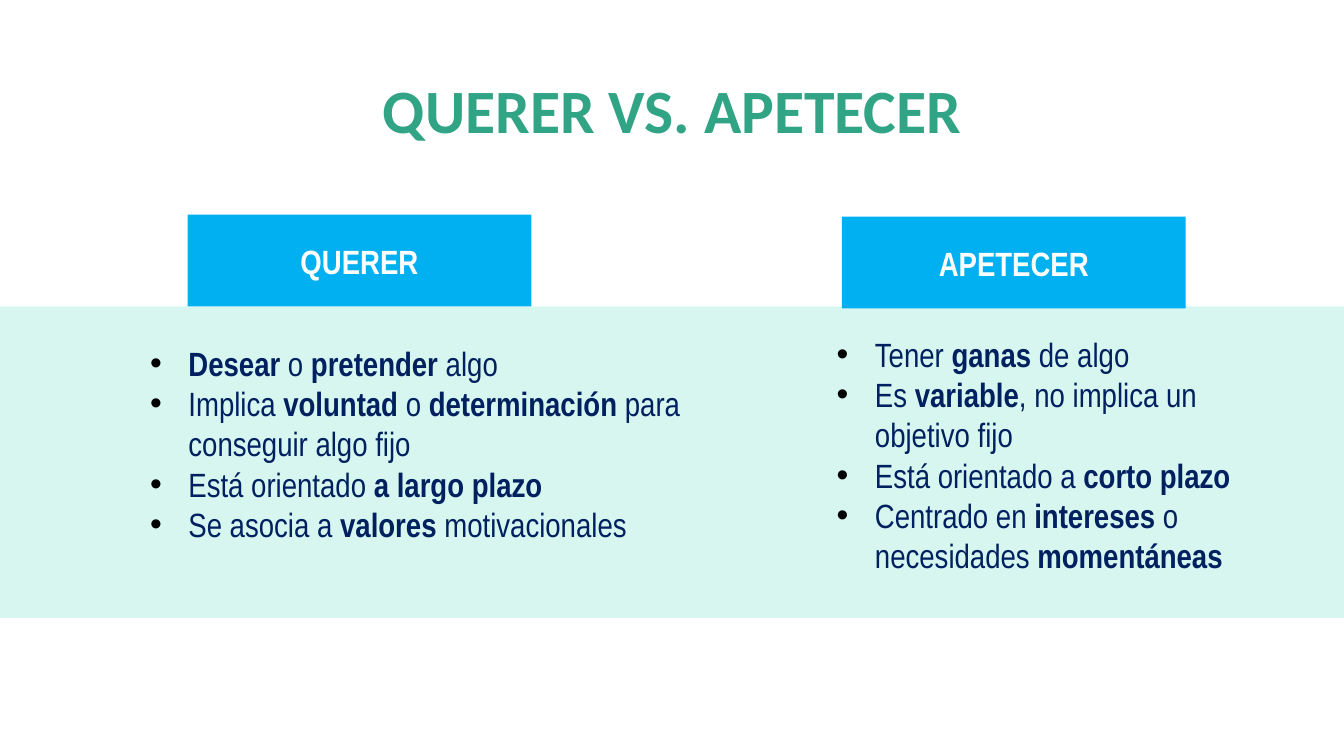
"""Build the slide that contrasts wanting with craving."""
from dataclasses import dataclass

from lxml.etree import SubElement
from pptx import Presentation
from pptx.dml.color import RGBColor
from pptx.enum.shapes import MSO_SHAPE as SHAPE
from pptx.enum.text import MSO_ANCHOR as ANCHOR, MSO_AUTO_SIZE as AUTO, PP_ALIGN as ALIGN
from pptx.oxml.ns import qn
from pptx.shapes.autoshape import Shape
from pptx.slide import Slide
from pptx.util import Inches, Pt

GREEN = RGBColor(0x31, 0xA4, 0x85)
MINT = RGBColor(0x29, 0xD3, 0xAD)
BLUE = RGBColor(0x00, 0xB0, 0xF0)
NAVY = RGBColor(0x00, 0x20, 0x60)
WHITE = RGBColor(0xFF, 0xFF, 0xFF)
BODY_FONT = "Arial Narrow"
INDENT = Inches(0.38)

Box = tuple[float, float, float, float]


@dataclass
class Column:
    """A heading with its points, where asterisks enclose bold words."""
    heading: str
    heading_box: Box
    points_box: Box
    points: list[str]


COLUMNS = [
    Column("QUERER", (1.86, 2.13, 3.41, 0.91), (1.39, 3.35, 6.41, 2.12), [
        "*Desear* o *pretender* algo",
        "Implica *voluntad* o *determinación* para conseguir algo fijo",
        "Está orientado *a largo plazo*",
        "Se asocia a *valores* motivacionales",
    ]),
    Column("APETECER", (8.35, 2.15, 3.41, 0.91), (8.2, 3.26, 4.77, 2.52), [
        "Tener *ganas* de algo",
        "Es *variable*, no implica un objetivo fijo",
        "Está orientado a *corto plazo*",
        "Centrado en *intereses* o necesidades *momentáneas*",
    ]),
]


def add_run(p, text: str, size: float, font: str, color: RGBColor, bold: bool) -> None:
    """Append one styled run to a paragraph."""
    r = p.add_run()
    r.text = text
    r.font.size = Pt(size)
    r.font.name = font
    r.font.color.rgb = color
    r.font.bold = bold


def add_rect(s: Slide, box: Box, color: RGBColor) -> Shape:
    """Draw a flat rectangle without outline."""
    sp = s.shapes.add_shape(SHAPE.RECTANGLE, *map(Inches, box))
    sp.shadow.inherit = False
    sp.fill.solid()
    sp.fill.fore_color.rgb = color
    sp.line.fill.background()
    return sp


def add_label(sp: Shape, text: str, size: float, font: str, color: RGBColor) -> None:
    """Put a bold centred line in the middle of a shape."""
    tf = sp.text_frame
    tf.word_wrap = True
    tf.vertical_anchor = ANCHOR.MIDDLE
    p = tf.paragraphs[0]
    p.alignment = ALIGN.CENTER
    add_run(p, text, size, font, color, True)


def add_bullet(p) -> None:
    """Give a paragraph a black bullet with a hanging indent."""
    pPr = p._p.get_or_add_pPr()
    pPr.set("marL", str(INDENT))
    pPr.set("indent", str(-INDENT))
    SubElement(SubElement(pPr, qn("a:buClr")), qn("a:srgbClr"), val="000000")
    SubElement(pPr, qn("a:buFont"), typeface="Arial")
    SubElement(pPr, qn("a:buChar"), char="•")


def add_column(s: Slide, column: Column) -> None:
    """Draw a heading block and its bulleted points."""
    add_label(add_rect(s, column.heading_box, BLUE), column.heading, 24, BODY_FONT, WHITE)
    tf = s.shapes.add_textbox(*map(Inches, column.points_box)).text_frame
    tf.word_wrap = True
    tf.auto_size = AUTO.SHAPE_TO_FIT_TEXT
    for i, point in enumerate(column.points):
        p = tf.add_paragraph() if i else tf.paragraphs[0]
        add_bullet(p)
        for j, part in enumerate(point.split("*")):
            if part:
                add_run(p, part, 24, BODY_FONT, NAVY, j % 2 == 1)


def main() -> None:
    """Assemble and save the slide."""
    prs = Presentation()
    prs.slide_width, prs.slide_height = Inches(13.33), Inches(7.5)
    s = prs.slides.add_slide(prs.slide_layouts[6])
    title = s.shapes.add_textbox(*map(Inches, (0.92, 0.4, 11.5, 1.45)))
    add_label(title, "QUERER VS. APETECER", 44, "Calibri", GREEN)
    title.text_frame.paragraphs[0].line_spacing = 0.9
    band = add_rect(s, (0, 3.04, 13.33, 3.09), MINT)
    color = band._element.spPr.find(qn("a:solidFill"))[0]
    SubElement(color, qn("a:alpha"), val="19000")
    for column in COLUMNS:
        add_column(s, column)
    prs.save("out.pptx")


if __name__ == "__main__":
    main()
